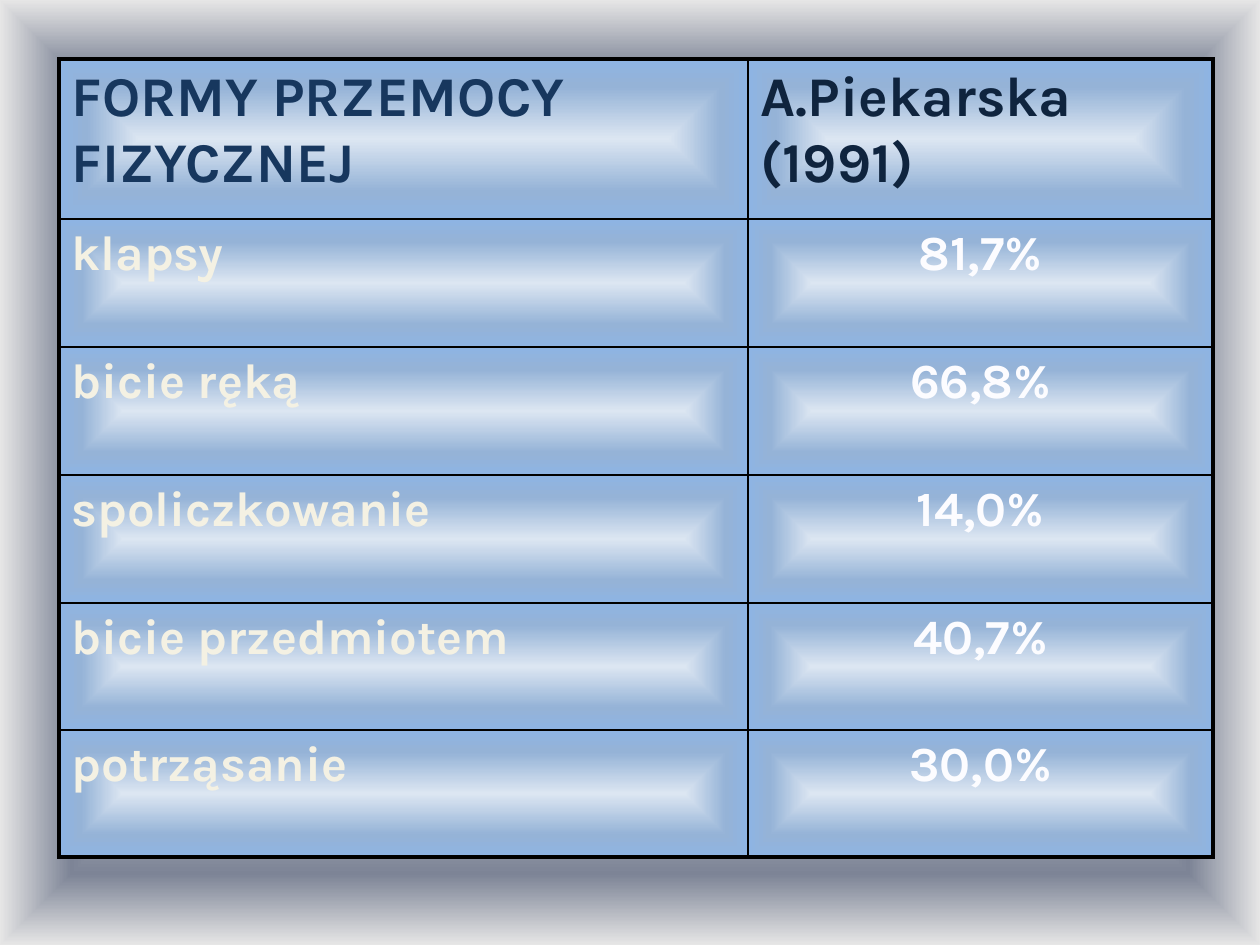
from dataclasses import dataclass

from lxml import etree
from pptx import Presentation
from pptx.dml.color import RGBColor
from pptx.enum.text import PP_ALIGN
from pptx.oxml import parse_xml
from pptx.oxml.ns import nsdecls, qn
from pptx.util import Pt

LEFT, CENTER = PP_ALIGN.LEFT, PP_ALIGN.CENTER
PX_PER_INCH = 126


@dataclass(frozen=True)
class Theme:
    font: str = "Karla"
    header_size: int = 32
    body_size: int = 28
    form_header: str = "17375E"
    source_header: str = "0F243E"
    form: str = "F4F1E3"
    share: str = "FCFCFF"
    # Letter outlines: colour, width in points, opacity in percent
    form_header_outline: tuple = ("558ED5", 1, 100)
    form_outline: tuple = ("054697", 1, 100)
    share_outline: tuple = ("1E7CEE", 0.07, 55)
    border: str = "000000"
    outer_border: float = 2.25
    inner_border: float = 1
    # Gradient stops: position in percent, colour
    cell_stops: tuple = ((0, "DCE6F2"), (65, "95B3D7"), (100, "8EB4E3"))
    backdrop_stops: tuple = ((0, "FFFFFF"), (7, "E6E6E6"), (32, "7D8496"),
                             (47, "E6E6E6"), (85, "7D8496"), (100, "E6E6E6"))


def px(length):
    return round(length * 914400 / PX_PER_INCH)


def line_xml(tag, color, width, opacity=100):
    return parse_xml(
        f'<a:{tag} {nsdecls("a")} w="{Pt(width)}"><a:solidFill><a:srgbClr val="{color}">'
        f'<a:alpha val="{opacity * 1000}"/></a:srgbClr></a:solidFill></a:{tag}>')


def gradient_xml(stops):
    stop_list = "".join(
        f'<a:gs pos="{position * 1000}"><a:srgbClr val="{color}"/></a:gs>'
        for position, color in stops)
    return parse_xml(
        f'<a:gradFill {nsdecls("a")} rotWithShape="1"><a:gsLst>{stop_list}</a:gsLst>'
        '<a:path path="shape"><a:fillToRect l="50000" t="50000" r="50000" b="50000"/>'
        '</a:path></a:gradFill>')


def write(frame, text, *, font, size, color, outline, align=LEFT):
    paragraph = frame.paragraphs[0]
    paragraph.alignment = align
    run = paragraph.add_run()
    run.text = text
    run.font.name = font
    run.font.size = Pt(size)
    run.font.bold = True
    run.font.color.rgb = RGBColor.from_string(color)
    run.font._element.insert(0, line_xml("ln", *outline))


class SlideBuilder:
    def __init__(self, slide, theme):
        self.slide = slide
        self.theme = theme

    def backdrop(self):
        self.slide.background.fill.solid()
        properties = self.slide.element.find(".//" + qn("p:bgPr"))
        solid = properties.find(qn("a:solidFill"))
        properties.replace(solid, gradient_xml(self.theme.backdrop_stops))

    def table(self, left, top, widths, heights):
        table = self.slide.shapes.add_table(
            len(heights), len(widths), px(left), px(top),
            px(sum(widths)), px(sum(heights))).table
        table.first_row = table.horz_banding = False
        for column, width in zip(table.columns, widths):
            column.width = px(width)
        for row, height in zip(table.rows, heights):
            row.height = px(height)
        return table

    def cell(self, table, row, column, text, **text_format):
        theme = self.theme
        cell = table.cell(row, column)
        write(cell.text_frame, text, font=theme.font, **text_format)
        # Thick lines only where the cell meets the edge of the table
        at_edge = {"lnL": column == 0, "lnR": column == len(table.columns) - 1,
                   "lnT": row == 0, "lnB": row == len(table.rows) - 1}
        properties = cell._tc.get_or_add_tcPr()
        for side, outer in at_edge.items():
            width = theme.outer_border if outer else theme.inner_border
            properties.append(line_xml(side, theme.border, width))
        properties.append(gradient_xml(theme.cell_stops))


def main():
    theme = Theme()
    presentation = Presentation()
    presentation.slide_width, presentation.slide_height = px(1260), px(945)
    slide = presentation.slides.add_slide(presentation.slide_layouts[6])
    builder = SlideBuilder(slide, theme)
    builder.backdrop()

    # Forms of violence and their shares
    shares = [("klapsy", "81,7%"), ("bicie ręką", "66,8%"),
              ("spoliczkowanie", "14,0%"), ("bicie przedmiotem", "40,7%"),
              ("potrząsanie", "30,0%")]
    table = builder.table(59, 59, [689, 465], [160, 128, 128, 128, 127, 127])

    # Header row
    builder.cell(table, 0, 0, "FORMY PRZEMOCY FIZYCZNEJ", size=theme.header_size,
                 color=theme.form_header, outline=theme.form_header_outline)
    builder.cell(table, 0, 1, "A.Piekarska (1991)", size=theme.header_size,
                 color=theme.source_header, outline=theme.share_outline)

    # Body rows
    for row, (form, share) in enumerate(shares, start=1):
        builder.cell(table, row, 0, form, size=theme.body_size,
                     color=theme.form, outline=theme.form_outline)
        builder.cell(table, row, 1, share, size=theme.body_size, color=theme.share,
                     outline=theme.share_outline, align=CENTER)

    presentation.save("out.pptx")


if __name__ == "__main__":
    main()
